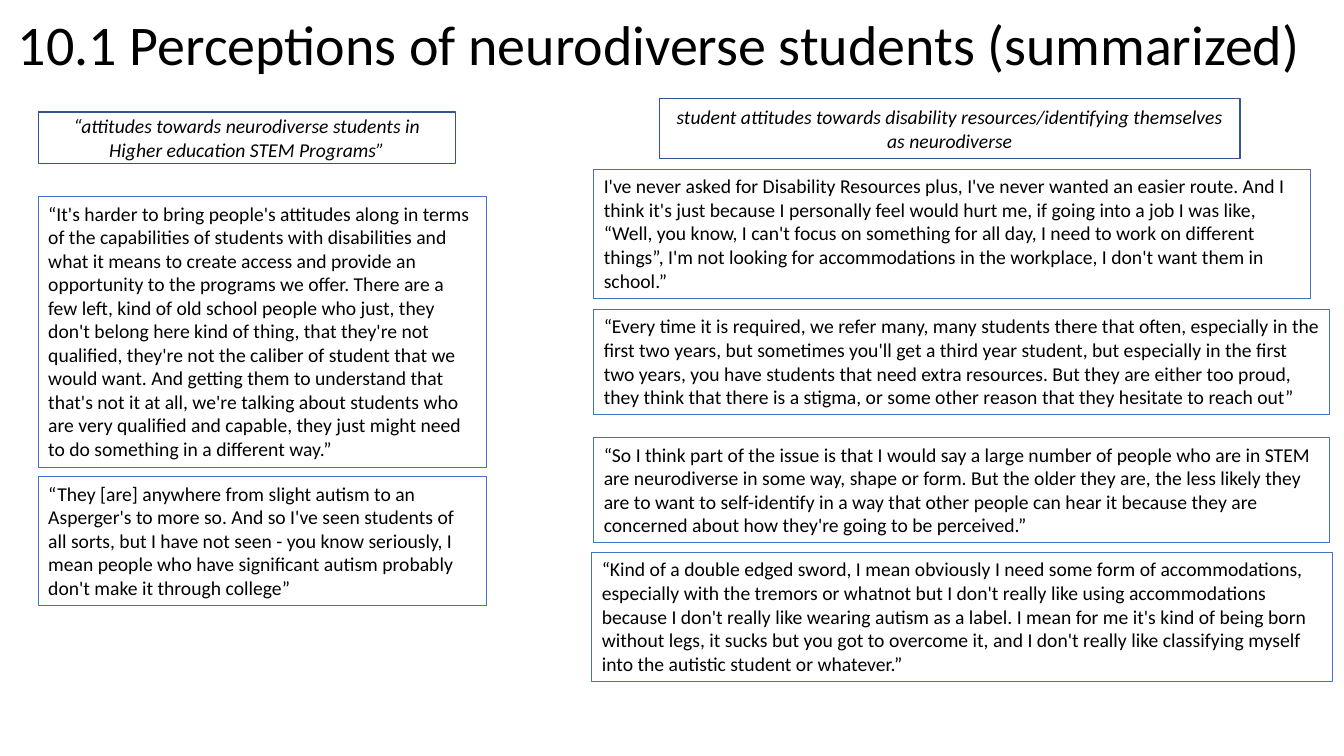
from pptx import Presentation
from pptx.dml.color import RGBColor
from pptx.enum.shapes import MSO_SHAPE
from pptx.enum.text import MSO_ANCHOR, MSO_AUTO_SIZE, PP_ALIGN
from pptx.util import Inches, Pt

COLORS = {
    "text": "000000",
    "heading_fill": "FFFFFF",
    "heading_line": "325491",
    "quote_line": "4472C4",
}


def write_text(shape, text, size, italic=False):
    """Fill a shape with one paragraph of wrapped text and return the paragraph."""
    text_frame = shape.text_frame
    text_frame.word_wrap = True
    text_frame.text = text
    paragraph = text_frame.paragraphs[0]
    font = paragraph.runs[0].font
    font.name = "Calibri"
    font.size = Pt(size)
    font.italic = italic
    font.color.rgb = RGBColor.from_string(COLORS["text"])
    return paragraph


def add_box(box, line_color, line_width):
    """Add an outlined rectangle; box is left, top, width, height in inches."""
    shape = slide.shapes.add_shape(MSO_SHAPE.RECTANGLE, *map(Inches, box))
    shape.shadow.inherit = False
    shape.line.color.rgb = RGBColor.from_string(COLORS[line_color])
    shape.line.width = Pt(line_width)
    return shape


presentation = Presentation()
presentation.slide_width = Inches(13.33)
presentation.slide_height = Inches(7.5)
slide = presentation.slides.add_slide(presentation.slide_layouts[6])

title = slide.shapes.add_textbox(Inches(0.08), Inches(-0.04), Inches(12.92), Inches(1.02))
title_paragraph = write_text(title, "10.1 Perceptions of neurodiverse students (summarized)", 40)
title_paragraph.line_spacing = 0.9
title.text_frame.vertical_anchor = MSO_ANCHOR.MIDDLE

headings = [
    ((0.38, 1.11, 4.14, 0.51),
     "“attitudes towards neurodiverse students in Higher education STEM Programs”"),
    ((6.54, 0.98, 5.76, 0.59),
     "student attitudes towards disability resources/identifying themselves as neurodiverse"),
]
for box, text in headings:
    heading = add_box(box, "heading_line", 1)
    heading.fill.solid()
    heading.fill.fore_color.rgb = RGBColor.from_string(COLORS["heading_fill"])
    heading.text_frame.vertical_anchor = MSO_ANCHOR.MIDDLE
    write_text(heading, text, 14, italic=True).alignment = PP_ALIGN.CENTER

quotes = [
    ((0.38, 1.95, 4.45, 2.69),
     "“It's harder to bring people's attitudes along in terms of the capabilities of students "
     "with disabilities and what it means to create access and provide an opportunity to the "
     "programs we offer. There are a few left, kind of old school people who just, they don't "
     "belong here kind of thing, that they're not qualified, they're not the caliber of student "
     "that we would want. And getting them to understand that that's not it at all, we're "
     "talking about students who are very qualified and capable, they just might need to do "
     "something in a different way.”"),
    ((0.38, 4.73, 4.45, 1.28),
     "“They [are] anywhere from slight autism to an Asperger's to more so. And so I've seen "
     "students of all sorts, but I have not seen - you know seriously, I mean people who have "
     "significant autism probably don't make it through college”"),
    ((5.89, 1.68, 7.11, 1.28),
     "I've never asked for Disability Resources plus, I've never wanted an easier route. And I "
     "think it's just because I personally feel would hurt me, if going into a job I was like, "
     "“Well, you know, I can't focus on something for all day, I need to work on different "
     "things”, I'm not looking for accommodations in the workplace, I don't want them in school.”"),
    ((5.89, 3.07, 7.3, 1.04),
     "“Every time it is required, we refer many, many students there that often, especially in "
     "the first two years, but sometimes you'll get a third year student, but especially in the "
     "first two years, you have students that need extra resources. But they are either too "
     "proud, they think that there is a stigma, or some other reason that they hesitate to "
     "reach out”"),
    ((5.89, 4.34, 7.3, 1.04),
     "“So I think part of the issue is that I would say a large number of people who are in STEM "
     "are neurodiverse in some way, shape or form. But the older they are, the less likely they "
     "are to want to self-identify in a way that other people can hear it because they are "
     "concerned about how they're going to be perceived.”"),
    ((5.87, 5.48, 7.35, 1.28),
     "“Kind of a double edged sword, I mean obviously I need some form of accommodations, "
     "especially with the tremors or whatnot but I don't really like using accommodations "
     "because I don't really like wearing autism as a label. I mean for me it's kind of being "
     "born without legs, it sucks but you got to overcome it, and I don't really like "
     "classifying myself into the autistic student or whatever.”"),
]
for box, text in quotes:
    quote = add_box(box, "quote_line", 0.75)
    quote.fill.background()
    quote.text_frame.vertical_anchor = MSO_ANCHOR.TOP
    quote.text_frame.auto_size = MSO_AUTO_SIZE.SHAPE_TO_FIT_TEXT
    write_text(quote, text, 14).alignment = PP_ALIGN.LEFT

presentation.save("out.pptx")
